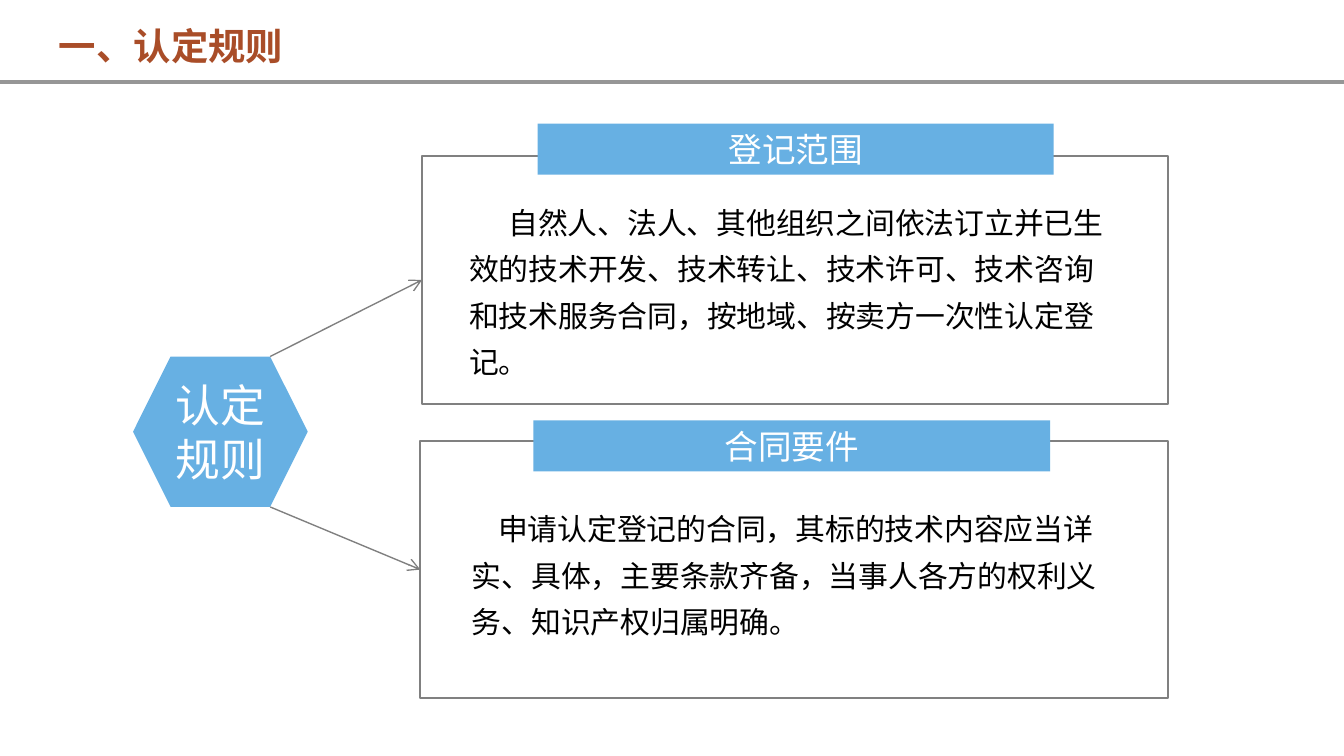
"""Build a slide that links the recognition rules to their two panels."""
from dataclasses import dataclass

from lxml import etree
from pptx import Presentation
from pptx.dml.color import RGBColor
from pptx.enum.shapes import MSO_CONNECTOR, MSO_SHAPE
from pptx.enum.text import MSO_ANCHOR, MSO_AUTO_SIZE, PP_ALIGN
from pptx.oxml.ns import qn
from pptx.shapes.autoshape import Shape
from pptx.shapes.connector import Connector
from pptx.slide import Slide
from pptx.util import Pt

RECTANGLE = MSO_SHAPE.RECTANGLE
HEXAGON = MSO_SHAPE.HEXAGON
STRAIGHT = MSO_CONNECTOR.STRAIGHT
MIDDLE = MSO_ANCHOR.MIDDLE
CENTER = PP_ALIGN.CENTER
GROW = MSO_AUTO_SIZE.SHAPE_TO_FIT_TEXT

FONT = "Noto Sans CJK SC"
COLORS = {
    "title": "A94D28",
    "rule": "969696",
    "border": "808080",
    "accent": "67B0E3",
    "light": "FFFFFF",
    "body": "000000",
}


@dataclass(frozen=True)
class Area:
    left: float
    top: float
    width: float
    height: float

    @property
    def lengths(self) -> tuple:
        return Pt(self.left), Pt(self.top), Pt(self.width), Pt(self.height)


@dataclass(frozen=True)
class Panel:
    frame: Area
    header: Area
    heading: str
    body: Area
    text: str
    indent: float


PANELS = [
    Panel(
        Area(226.1, 83.4, 399.6, 133.2),
        Area(288, 66.2, 276.5, 27.4),
        "登记范围",
        Area(245.5, 100.8, 357.1, 105.8),
        "自然人、法人、其他组织之间依法订立并已生效的技术开发、技术转让、技术许可、"
        "技术咨询和技术服务合同，按地域、按卖方一次性认定登记。",
        21,
    ),
    Panel(
        Area(225.2, 236.4, 400.6, 137.5),
        Area(285.8, 225.2, 276.9, 27.4),
        "合同要件",
        Area(247, 265, 357.1, 80.6),
        "申请认定登记的合同，其标的技术内容应当详实、具体，主要条款齐备，"
        "当事人各方的权利义务、知识产权归属明确。",
        14,
    ),
]
HUB = Area(71.3, 191, 93.6, 80.6)


def color(name: str) -> RGBColor:
    """Return a named colour."""
    return RGBColor.from_string(COLORS[name])


def write(box: Shape, text: str, size: float, ink: str, bold: bool = False) -> None:
    """Put one formatted paragraph in a box."""
    frame = box.text_frame
    frame.text = text
    frame.word_wrap = True
    for span in frame.paragraphs[0].runs:
        span.font.name = FONT
        span.font.size = Pt(size)
        span.font.bold = bold
        span.font.color.rgb = color(ink)
        east_asian = etree.SubElement(span.font._element, qn("a:ea"))
        east_asian.set("typeface", FONT)


def set_margins(box: Shape) -> None:
    """Give a box narrow inner margins."""
    frame = box.text_frame
    frame.margin_left = frame.margin_right = Pt(5.8)
    frame.margin_top = frame.margin_bottom = Pt(2.9)


def add_label(page: Slide, kind: MSO_SHAPE, area: Area, text: str, size: float) -> None:
    """Draw a filled shape with centred text."""
    box = page.shapes.add_shape(kind, *area.lengths)
    box.shadow.inherit = False
    box.fill.solid()
    box.fill.fore_color.rgb = color("accent")
    box.line.fill.background()
    write(box, text, size, "light")
    set_margins(box)
    box.text_frame.vertical_anchor = MIDDLE
    box.text_frame.paragraphs[0].alignment = CENTER


def add_text(page: Slide, area: Area, text: str, size: float, ink: str,
             spacing: float, bold: bool = False) -> Shape:
    """Draw a text box that grows with its text."""
    box = page.shapes.add_textbox(*area.lengths)
    write(box, text, size, ink, bold)
    box.text_frame.auto_size = GROW
    box.text_frame.paragraphs[0].line_spacing = spacing
    return box


def add_line(page: Slide, start: tuple[float, float], end: tuple[float, float],
             ink: str, width: float) -> Connector:
    """Draw a straight line without a shadow."""
    points = [Pt(value) for value in (*start, *end)]
    line = page.shapes.add_connector(STRAIGHT, *points)
    line.line.color.rgb = color(ink)
    line.line.width = Pt(width)
    etree.SubElement(line._element.spPr, qn("a:effectLst"))
    return line


def add_arrow(page: Slide, start: tuple[float, float], end: tuple[float, float]) -> None:
    """Draw a thin line with an open arrowhead."""
    arrow = add_line(page, start, end, "border", 0.75)
    outline = arrow._element.spPr.find(qn("a:ln"))
    etree.SubElement(outline, qn("a:tailEnd")).set("type", "arrow")


def add_panel(page: Slide, panel: Panel) -> None:
    """Draw a bordered panel with its header and body text."""
    frame = page.shapes.add_shape(RECTANGLE, *panel.frame.lengths)
    frame.shadow.inherit = False
    frame.fill.background()
    frame.line.color.rgb = color("border")
    frame.line.width = Pt(1)
    add_label(page, RECTANGLE, panel.header, panel.heading, 18)
    body = add_text(page, panel.body, panel.text, 16, "body", 1.3)
    set_margins(body)
    para = body.text_frame.paragraphs[0]
    para._p.get_or_add_pPr().set("indent", str(Pt(panel.indent)))


def main() -> None:
    """Build and save the deck."""
    deck = Presentation()
    deck.slide_width, deck.slide_height = Pt(720), Pt(405)
    page = deck.slides.add_slide(deck.slide_layouts[6])

    add_line(page, (0, 43.9), (720, 43.9), "rule", 1.75)
    add_text(page, Area(24.5, 4.3, 241.2, 36), "一、认定规则", 20, "title", 1.2, True)
    add_label(page, HEXAGON, HUB, "认定规则", 24)

    corner = HUB.left + HUB.width - HUB.height / 4
    for panel, edge in zip(PANELS, (HUB.top, HUB.top + HUB.height)):
        add_panel(page, panel)
        target = panel.frame.left, panel.frame.top + panel.frame.height / 2
        add_arrow(page, (corner, edge), target)

    deck.save("out.pptx")


if __name__ == "__main__":
    main()
